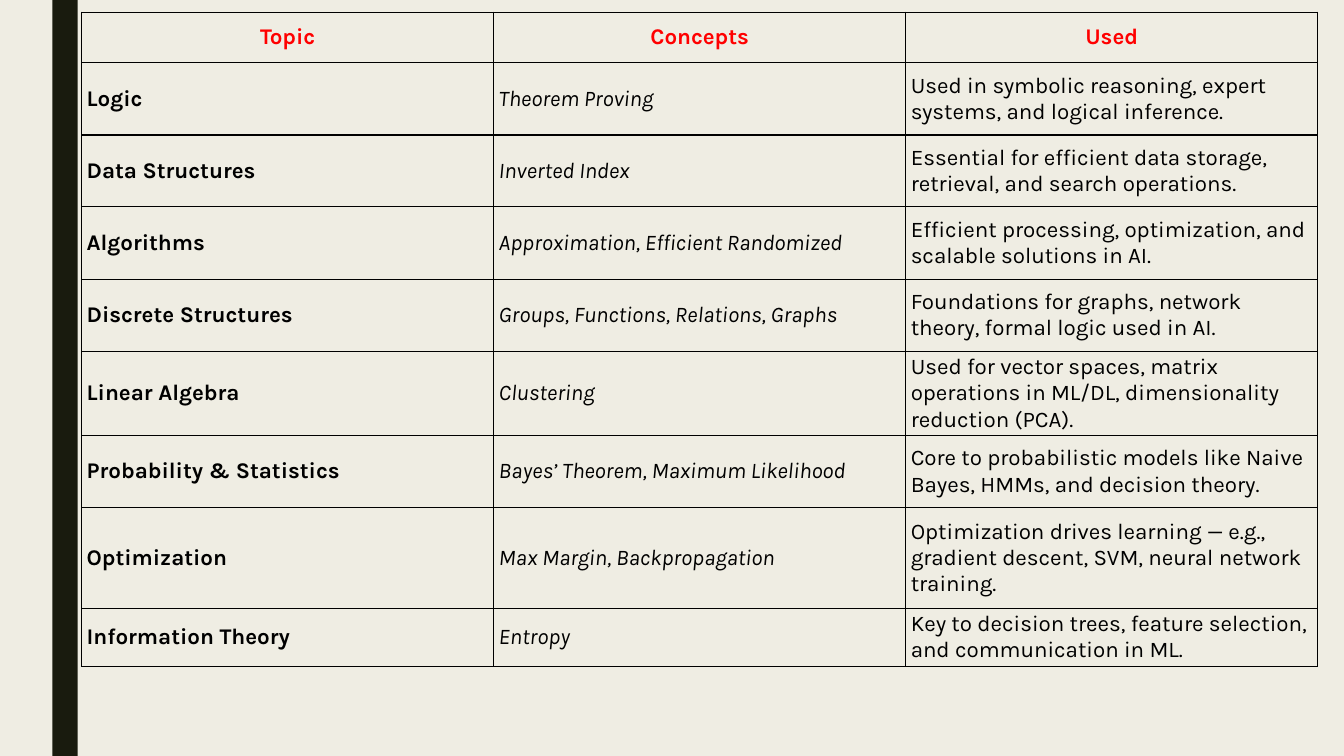
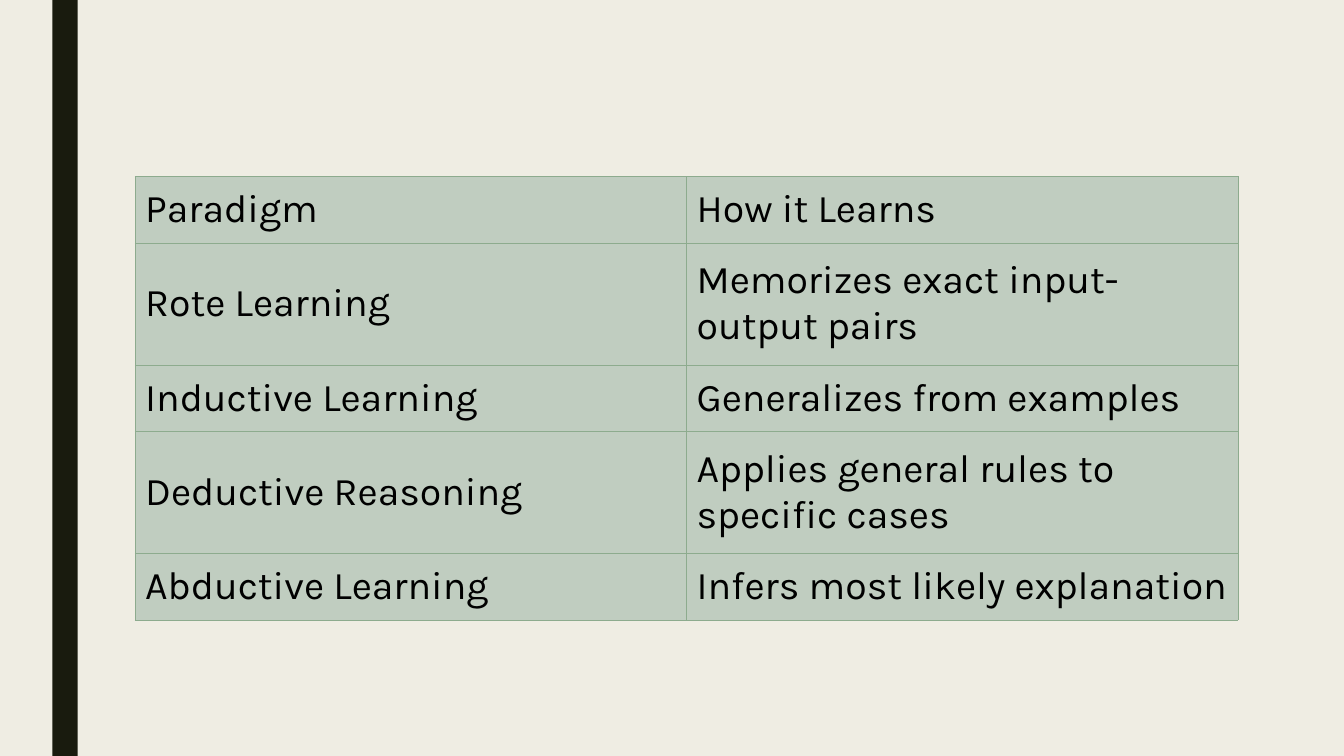
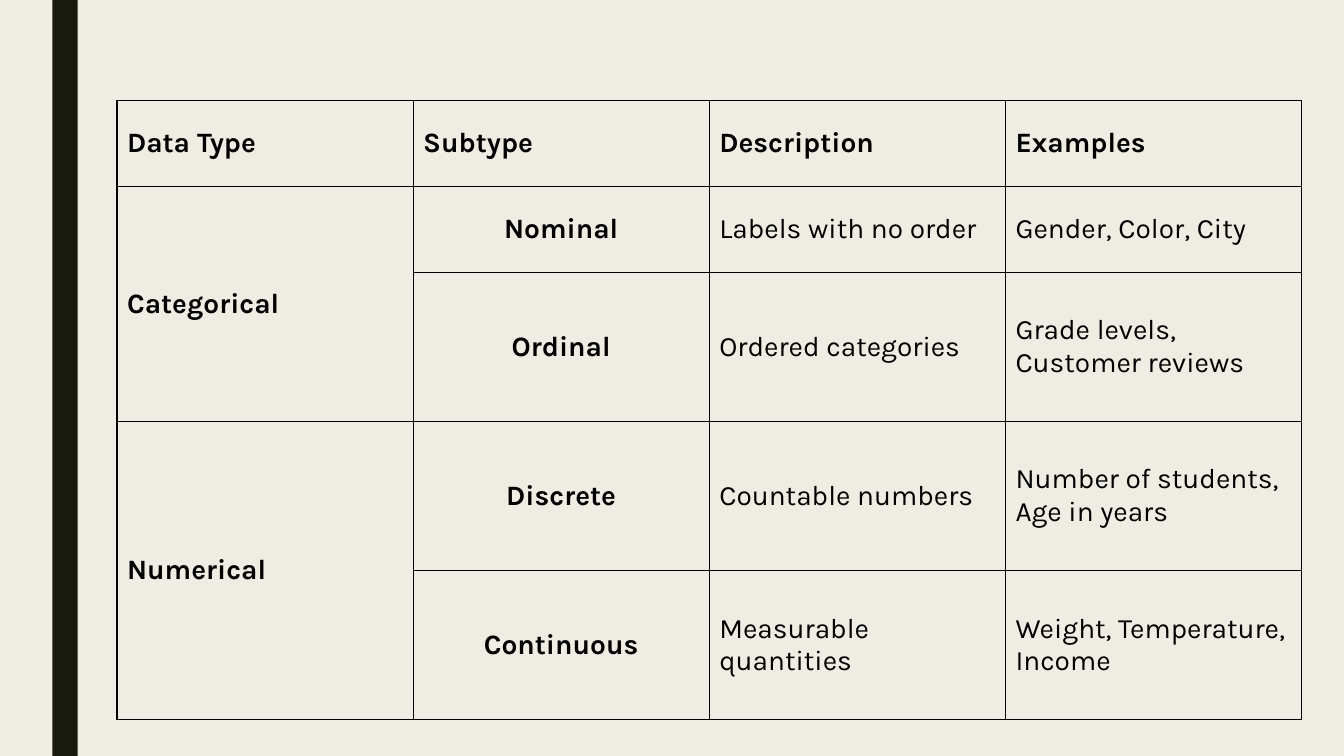
from lxml.etree import SubElement
from pptx import Presentation
from pptx.dml.color import RGBColor
from pptx.enum.shapes import MSO_SHAPE as Shape
from pptx.enum.text import MSO_ANCHOR as Anchor, PP_ALIGN as Align
from pptx.oxml.ns import qn
from pptx.util import Inches, Pt

FONT = "Karla"
BACKGROUND, BAND = "EFEDE3", "191B0E"
BLACK, RED = "000000", "FF0000"
SAGE, PALE_SAGE = "8DAB8E", "C0CDC0"

BOLD = {"bold": True}
ITALIC = {"italic": True}
CENTERED_BOLD = {"bold": True, "align": Align.CENTER}
PLAIN = {}

TABLES = [
    {
        "left": 0.81, "top": 0.12, "width": 12.26,
        "heights": [0.5, 0.72, 0.71, 0.72, 0.72, 0.83, 0.72, 1, 0.57],
        "size": 16, "margins": (0.05, 0.02), "border": (BLACK, 1), "fill": None,
        "header": CENTERED_BOLD | {"color": RED},
        "columns": [BOLD, ITALIC, PLAIN],
        "merges": [],
        "rows": [
            ("Topic", "Concepts", "Used"),
            ("Logic", "Theorem Proving",
             "Used in symbolic reasoning, expert systems, and logical inference."),
            ("Data Structures", "Inverted Index",
             "Essential for efficient data storage, retrieval, and search operations."),
            ("Algorithms", "Approximation, Efficient Randomized",
             "Efficient processing, optimization, and scalable solutions in AI."),
            ("Discrete Structures", "Groups, Functions, Relations, Graphs",
             "Foundations for graphs, network theory, formal logic used in AI."),
            ("Linear Algebra", "Clustering",
             "Used for vector spaces, matrix operations in ML/DL, "
             "dimensionality reduction (PCA)."),
            ("Probability & Statistics", "Bayes’ Theorem, Maximum Likelihood",
             "Core to probabilistic models like Naive Bayes, HMMs, and decision theory."),
            ("Optimization", "Max Margin, Backpropagation",
             "Optimization drives learning — e.g., gradient descent, SVM, "
             "neural network training."),
            ("Information Theory", "Entropy",
             "Key to decision trees, feature selection, and communication in ML."),
        ],
    },
    {
        "left": 1.34, "top": 1.75, "width": 10.94,
        "heights": [0.66, 1.21, 0.66, 1.21, 0.66],
        "size": 28, "margins": (0.1, 0.05), "border": (SAGE, 0.5), "fill": PALE_SAGE,
        "header": PLAIN,
        "columns": [PLAIN, PLAIN],
        "merges": [],
        "rows": [
            ("Paradigm", "How it Learns"),
            ("Rote Learning", "Memorizes exact input-output pairs"),
            ("Inductive Learning", "Generalizes from examples"),
            ("Deductive Reasoning", "Applies general rules to specific cases"),
            ("Abductive Learning", "Infers most likely explanation"),
        ],
    },
    {
        "left": 1.16, "top": 1, "width": 11.75,
        "heights": [0.85, 0.85, 1.48, 1.48, 1.48],
        "size": 20, "margins": (0.1, 0.05), "border": (BLACK, 1), "fill": None,
        "header": BOLD,
        "columns": [BOLD, CENTERED_BOLD, PLAIN, PLAIN],
        "merges": [((1, 0), (2, 0)), ((3, 0), (4, 0))],
        "rows": [
            ("Data Type", "Subtype", "Description", "Examples"),
            ("Categorical", "Nominal", "Labels with no order", "Gender, Color, City"),
            ("", "Ordinal", "Ordered categories", "Grade levels, Customer reviews"),
            ("Numerical", "Discrete", "Countable numbers",
             "Number of students, Age in years"),
            ("", "Continuous", "Measurable quantities", "Weight, Temperature, Income"),
        ],
    },
]


def rgb(color):
    return RGBColor.from_string(color)


def write(cell, text, size, color=BLACK, bold=False, italic=False, align=Align.LEFT):
    para = cell.text_frame.paragraphs[0]
    para.alignment = align
    span = para.add_run()
    span.text = text
    font = span.font
    font.name, font.size, font.bold, font.italic = FONT, Pt(size), bold, italic
    font.color.rgb = rgb(color)


def paint_cell(cell, border, fill):
    """Draw all four borders, then the fill, which must follow them in the XML."""
    color, points = border
    properties = cell._tc.get_or_add_tcPr()
    for side in ("a:lnL", "a:lnR", "a:lnT", "a:lnB"):
        line = SubElement(properties, qn(side), w=str(Pt(points)))
        solid = SubElement(line, qn("a:solidFill"))
        SubElement(solid, qn("a:srgbClr"), val=color)
    if fill:
        cell.fill.solid()
        cell.fill.fore_color.rgb = rgb(fill)
    else:
        cell.fill.background()


def add_grid(page, grid):
    rows, columns, heights = grid["rows"], grid["columns"], grid["heights"]
    table = page.shapes.add_table(
        len(rows), len(columns), Inches(grid["left"]), Inches(grid["top"]),
        Inches(grid["width"]), Inches(sum(heights))).table
    table.first_row = table.horz_banding = False
    for row, height in zip(table.rows, heights):
        row.height = Inches(height)

    side_margin, end_margin = map(Inches, grid["margins"])
    for r, texts in enumerate(rows):
        for c, text in enumerate(texts):
            cell = table.cell(r, c)
            cell.vertical_anchor = Anchor.MIDDLE
            cell.margin_left = cell.margin_right = side_margin
            cell.margin_top = cell.margin_bottom = end_margin
            paint_cell(cell, grid["border"], grid["fill"])
            if text:
                style = columns[c] if r else grid["header"]
                write(cell, text, grid["size"], **style)
    for first, last in grid["merges"]:
        table.cell(*first).merge(table.cell(*last))


def style_master(master, page):
    """Give the master its background and side band; the band is drawn on page and moved."""
    master.background.fill.solid()
    master.background.fill.fore_color.rgb = rgb(BACKGROUND)
    band = page.shapes.add_shape(
        Shape.RECTANGLE, Inches(0.52), 0, Inches(0.25), Inches(7.5))
    band.shadow.inherit = False
    band.fill.solid()
    band.fill.fore_color.rgb = rgb(BAND)
    band.line.fill.background()
    master.shapes.element.append(band.element)


def main():
    deck = Presentation()
    deck.slide_width, deck.slide_height = Inches(13.33), Inches(7.5)
    pages = [deck.slides.add_slide(deck.slide_layouts[6]) for _ in TABLES]
    style_master(deck.slide_master, pages[0])
    for page, grid in zip(pages, TABLES):
        add_grid(page, grid)
    deck.save("out.pptx")


if __name__ == "__main__":
    main()
